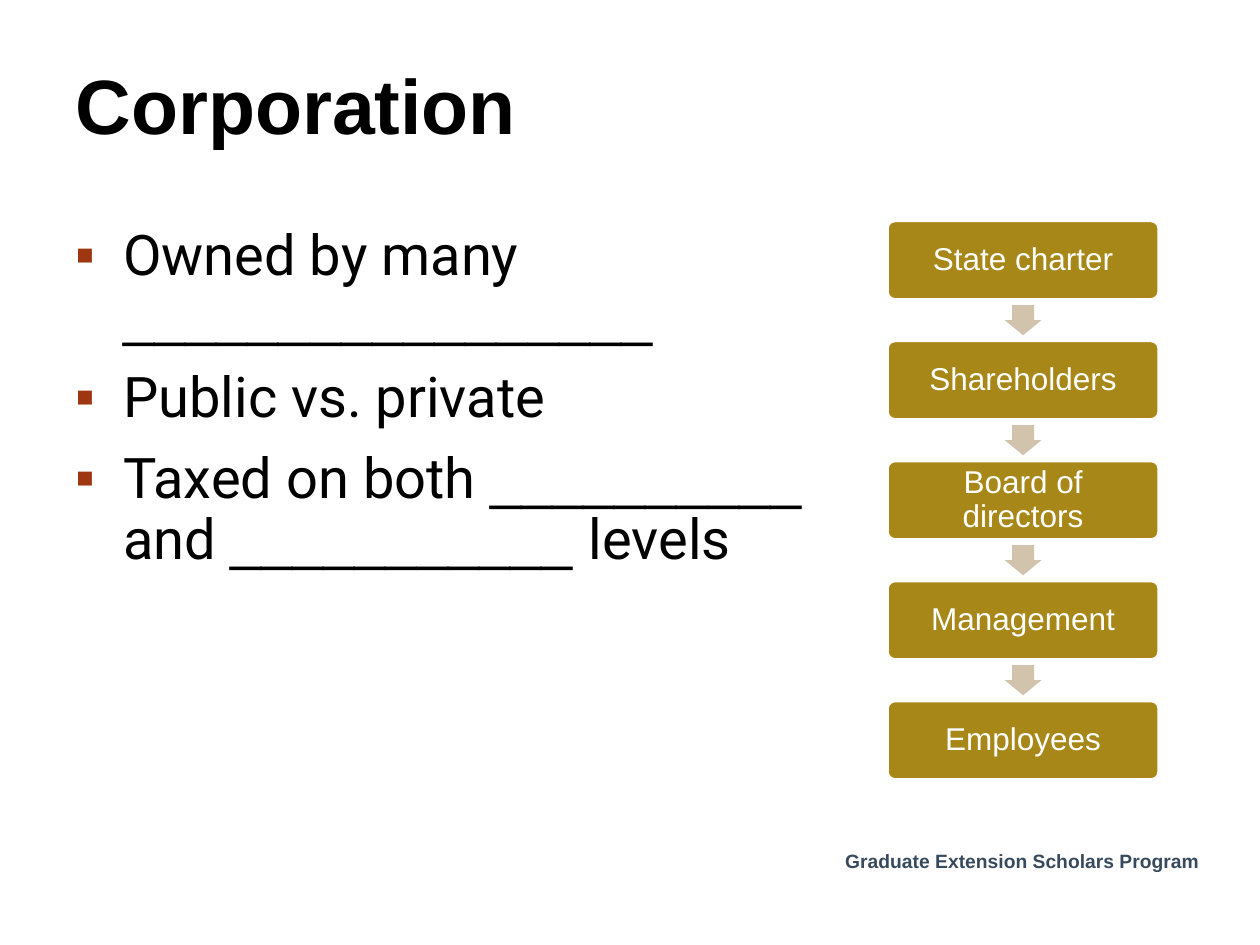
from lxml.etree import SubElement
from pptx import Presentation
from pptx.dml.color import RGBColor
from pptx.enum.shapes import MSO_SHAPE as Shape
from pptx.enum.text import MSO_ANCHOR as Anchor, PP_ALIGN as Align
from pptx.oxml.ns import qn
from pptx.util import Inches, Pt

# Content
TITLE = "Corporation"
PROGRAM = "Graduate Extension Scholars Program"
BULLETS = [
    [("Owned by many ", "Roboto"), ("_________________", "Arial")],
    [("Public vs. private", "Roboto")],
    [("Taxed on both ", "Roboto"), ("__________", "Arial"), (" and ", "Roboto"),
     ("___________ ", "Arial"), ("levels", "Roboto")],
]
LEVELS = ["State charter", "Shareholders", "Board of directors",
          "Management", "Employees"]

# Colours
BLACK = RGBColor(0x00, 0x00, 0x00)
WHITE = RGBColor(0xFF, 0xFF, 0xFF)
GOLD = RGBColor(0xA8, 0x87, 0x19)
SAND = RGBColor(0xD1, 0xC3, 0xAC)
SLATE = RGBColor(0x37, 0x4A, 0x5D)
RUST = "9E3611"

# Flow geometry in inches
FLOW_LEFT, FLOW_TOP, LAST_TOP = 7.04, 1.75, 5.56
BOX_W, BOX_H = 2.16, 0.63
ARROW_W, ARROW_H = 0.24, 0.29
PITCH = (LAST_TOP - FLOW_TOP) / (len(LEVELS) - 1)


def place(left, top, width, height):
    return [Inches(length) for length in (left, top, width, height)]


def style(run, size, color, font="Arial", bold=False):
    run.font.size = Pt(size)
    run.font.name = font
    run.font.color.rgb = color
    run.font.bold = bold


def add_bullet(paragraph):
    props = paragraph._p.get_or_add_pPr()
    props.set("marL", str(Inches(0.38)))
    props.set("indent", str(-Inches(0.38)))
    SubElement(SubElement(props, qn("a:buClr")), qn("a:srgbClr"), val=RUST)
    SubElement(props, qn("a:buFont"), typeface="Arial")
    SubElement(props, qn("a:buChar"), char="▪")


def add_flow_shape(slide, kind, bounds, fill, *adjustments):
    shape = slide.shapes.add_shape(kind, *place(*bounds))
    shape.shadow.inherit = False
    shape.fill.solid()
    shape.fill.fore_color.rgb = fill
    for i, value in enumerate(adjustments):
        shape.adjustments[i] = value
    return shape


prs = Presentation()
prs.slide_width, prs.slide_height = Inches(10), Inches(7.5)
slide = prs.slides.add_slide(prs.slide_layouts[5])

# Program name
program = slide.shapes.add_textbox(*place(6.61, 6.69, 3.05, 0.29)).text_frame
program.word_wrap = True
program.text = PROGRAM
style(program.paragraphs[0].runs[0], 11, SLATE, bold=True)

# Title
title = slide.shapes.title
title.left, title.top, title.width, title.height = place(0.5, 0.3, 9, 1.04)
title.text_frame.text = TITLE
title.text_frame.vertical_anchor = Anchor.MIDDLE
title.text_frame.paragraphs[0].alignment = Align.LEFT
style(title.text_frame.paragraphs[0].runs[0], 44, BLACK, bold=True)

# Bulleted points
points = slide.shapes.add_textbox(*place(0.5, 1.75, 6.36, 4.8)).text_frame
points.word_wrap = True
for i, pieces in enumerate(BULLETS):
    point = points.add_paragraph() if i else points.paragraphs[0]
    add_bullet(point)
    point.line_spacing = 0.9
    point.space_before = Pt(12 if i else 0)
    for text, font in pieces:
        run = point.add_run()
        run.text = text
        style(run, 32, BLACK, font)

# Flow from charter to employees
for i, level in enumerate(LEVELS):
    top = FLOW_TOP + i * PITCH
    box = add_flow_shape(slide, Shape.ROUNDED_RECTANGLE,
                         (FLOW_LEFT, top, BOX_W, BOX_H), GOLD, 0.1)
    box.line.color.rgb = WHITE
    box.line.width = Pt(2)
    label = box.text_frame
    label.word_wrap = True
    label.vertical_anchor = Anchor.MIDDLE
    label.margin_left = label.margin_right = Inches(0.08)
    label.margin_top = label.margin_bottom = Inches(0.08)
    label.text = level
    label.paragraphs[0].alignment = Align.CENTER
    label.paragraphs[0].line_spacing = 0.9
    style(label.paragraphs[0].runs[0], 18, WHITE)

    if i < len(LEVELS) - 1:
        arrow_left = FLOW_LEFT + (BOX_W - ARROW_W) / 2
        arrow_top = top + (BOX_H + PITCH - ARROW_H) / 2
        arrow = add_flow_shape(slide, Shape.RIGHT_ARROW,
                               (arrow_left, arrow_top, ARROW_W, ARROW_H),
                               SAND, 0.6, 0.5)
        arrow.rotation = 90
        arrow.line.fill.background()

prs.save("out.pptx")
